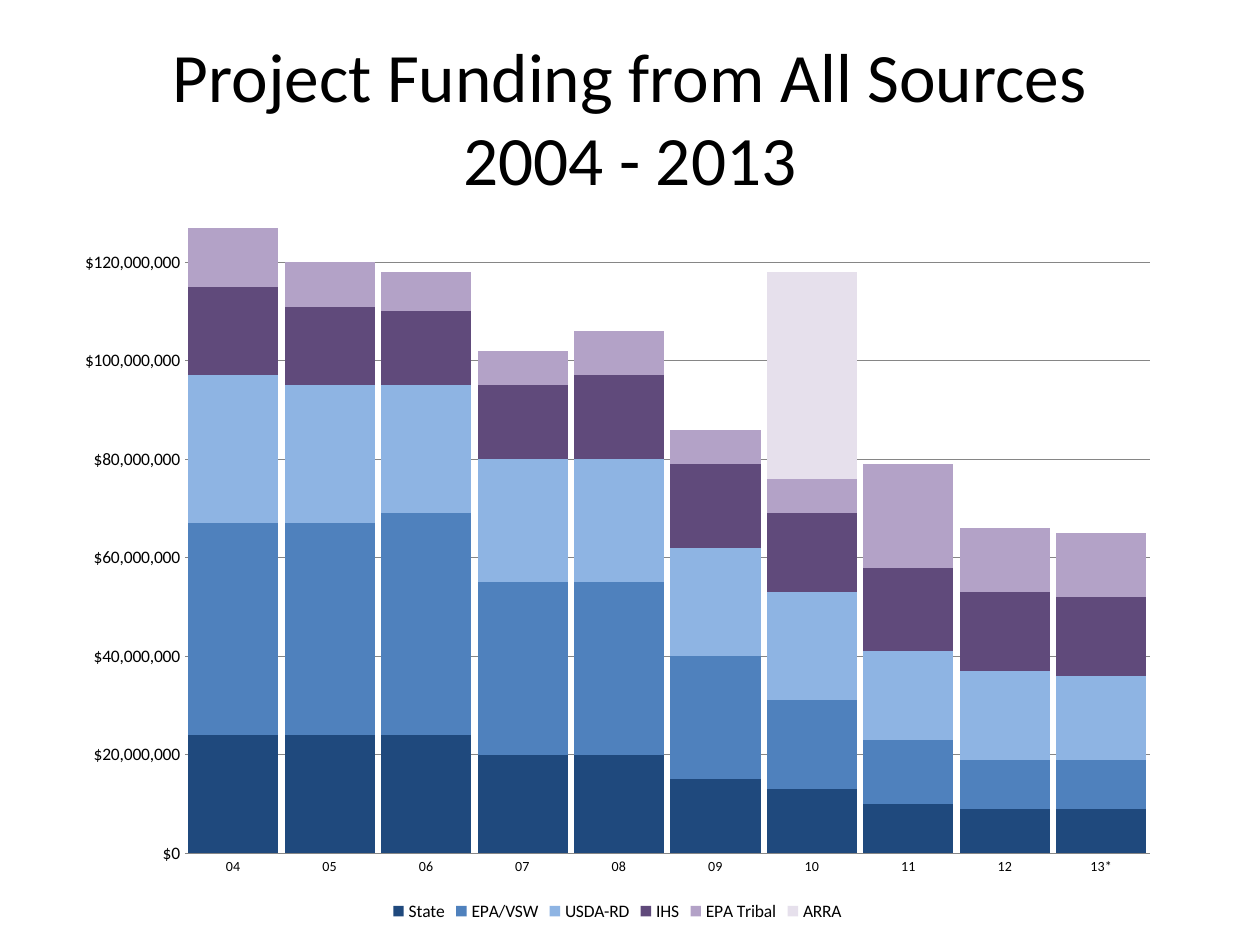
from lxml.etree import SubElement
from pptx import Presentation
from pptx.chart.data import CategoryChartData
from pptx.dml.color import RGBColor
from pptx.enum.chart import XL_CHART_TYPE as ChartType
from pptx.enum.chart import XL_LEGEND_POSITION as LegendPosition
from pptx.enum.chart import XL_TICK_MARK as TickMark
from pptx.enum.text import MSO_ANCHOR as Anchor
from pptx.enum.text import PP_ALIGN as Align
from pptx.oxml.ns import qn
from pptx.util import Inches, Pt

WIDTH, HEIGHT = Inches(10), Inches(7.5)
FONT = "Calibri"
MILLION = 1_000_000
COLORS = {
    "text": "000000",
    "grid": "868686",
    "State": "1F497D",
    "EPA/VSW": "4F81BD",
    "USDA-RD": "8EB4E3",
    "IHS": "604A7B",
    "EPA Tribal": "B3A2C7",
    "ARRA": "E6E0EC",
}
YEARS = ["04", "05", "06", "07", "08", "09", "10", "11", "12", "13*"]
FUNDING_MILLIONS = {
    "State": [24, 24, 24, 20, 20, 15, 13, 10, 9, 9],
    "EPA/VSW": [43, 43, 45, 35, 35, 25, 18, 13, 10, 10],
    "USDA-RD": [30, 28, 26, 25, 25, 22, 22, 18, 18, 17],
    "IHS": [18, 16, 15, 15, 17, 17, 16, 17, 16, 16],
    "EPA Tribal": [12, 9, 8, 7, 9, 7, 7, 21, 13, 13],
    "ARRA": [None] * 6 + [42] + [None] * 3,
}


def color(name):
    """Return the named colour."""
    return RGBColor.from_string(COLORS[name])


def box(left, top, width, height):
    """Turn shares of the slide's size into lengths."""
    return (int(left * WIDTH), int(top * HEIGHT),
            int(width * WIDTH), int(height * HEIGHT))


def style_font(font, size):
    """Set the slide's typeface and text colour at a size."""
    font.name = FONT
    font.size = Pt(size)
    font.color.rgb = color("text")


def add_title(slide, lines, area):
    """Add a centred title with one run per line."""
    frame = slide.shapes.add_textbox(*area).text_frame
    frame.word_wrap = True
    frame.vertical_anchor = Anchor.MIDDLE
    paragraph = frame.paragraphs[0]
    paragraph.alignment = Align.CENTER
    for index, line in enumerate(lines):
        if index:
            paragraph.add_line_break()
        run = paragraph.add_run()
        run.text = line
        style_font(run.font, 39.6)


def place_plot(chart, **shares):
    """Fix the inner plot area at shares of the chart's size."""
    plot_area = chart.plots[0]._element.getparent()
    layout = plot_area.find(qn("c:layout"))
    if layout is None:
        layout = SubElement(plot_area, qn("c:layout"))
        plot_area.insert(0, layout)
    manual = SubElement(layout, qn("c:manualLayout"))
    settings = {"layoutTarget": "inner", "xMode": "edge", "yMode": "edge", **shares}
    for name, value in settings.items():
        SubElement(manual, qn(f"c:{name}")).set("val", str(value))


def style_axes(chart):
    """Format the year axis and the dollar axis."""
    years, dollars = chart.category_axis, chart.value_axis
    for axis, size in ((years, 8), (dollars, 10)):
        axis.major_tick_mark = axis.minor_tick_mark = TickMark.NONE
        style_font(axis.tick_labels.font, size)
    years.format.line.color.rgb = color("grid")
    dollars.format.line.fill.background()
    dollars.minimum_scale = 0
    dollars.maximum_scale = 130 * MILLION
    dollars.major_unit = 20 * MILLION
    dollars.has_major_gridlines = True
    dollars.major_gridlines.format.line.color.rgb = color("grid")
    dollars.major_gridlines.format.line.width = Pt(0.75)
    dollars.tick_labels.number_format = '"$"#,##0'
    dollars.tick_labels.number_format_is_linked = False


def add_funding_chart(slide, area):
    """Add the stacked columns of funding by source and year."""
    data = CategoryChartData(number_format='"$"#,##0')
    data.categories = YEARS
    for source, amounts in FUNDING_MILLIONS.items():
        data.add_series(source, [amount and amount * MILLION for amount in amounts])
    chart = slide.shapes.add_chart(ChartType.COLUMN_STACKED, *area, data).chart
    style_font(chart.font, 10)
    chart.has_title = False
    chart.has_legend = True
    chart.legend.position = LegendPosition.BOTTOM
    chart.legend.include_in_layout = False
    style_font(chart.legend.font, 10)
    plot = chart.plots[0]
    plot.gap_width, plot.overlap = 7, 100
    plot.vary_by_categories = False
    for series in plot.series:
        series.format.fill.solid()
        series.format.fill.fore_color.rgb = color(series.name)
    style_axes(chart)
    place_plot(chart, x=0.11, y=0.02, w=0.87, h=0.88)


def main():
    """Build and save the funding slide."""
    presentation = Presentation()
    presentation.slide_width, presentation.slide_height = WIDTH, HEIGHT
    slide = presentation.slides.add_slide(presentation.slide_layouts[6])
    add_title(slide, ["Project Funding from All Sources", "2004 - 2013"],
              box(0.05, 0.04, 0.9, 1 / 6))
    add_funding_chart(slide, box(0.05, 0.21, 0.88, 0.77))
    presentation.save("out.pptx")


if __name__ == "__main__":
    main()
